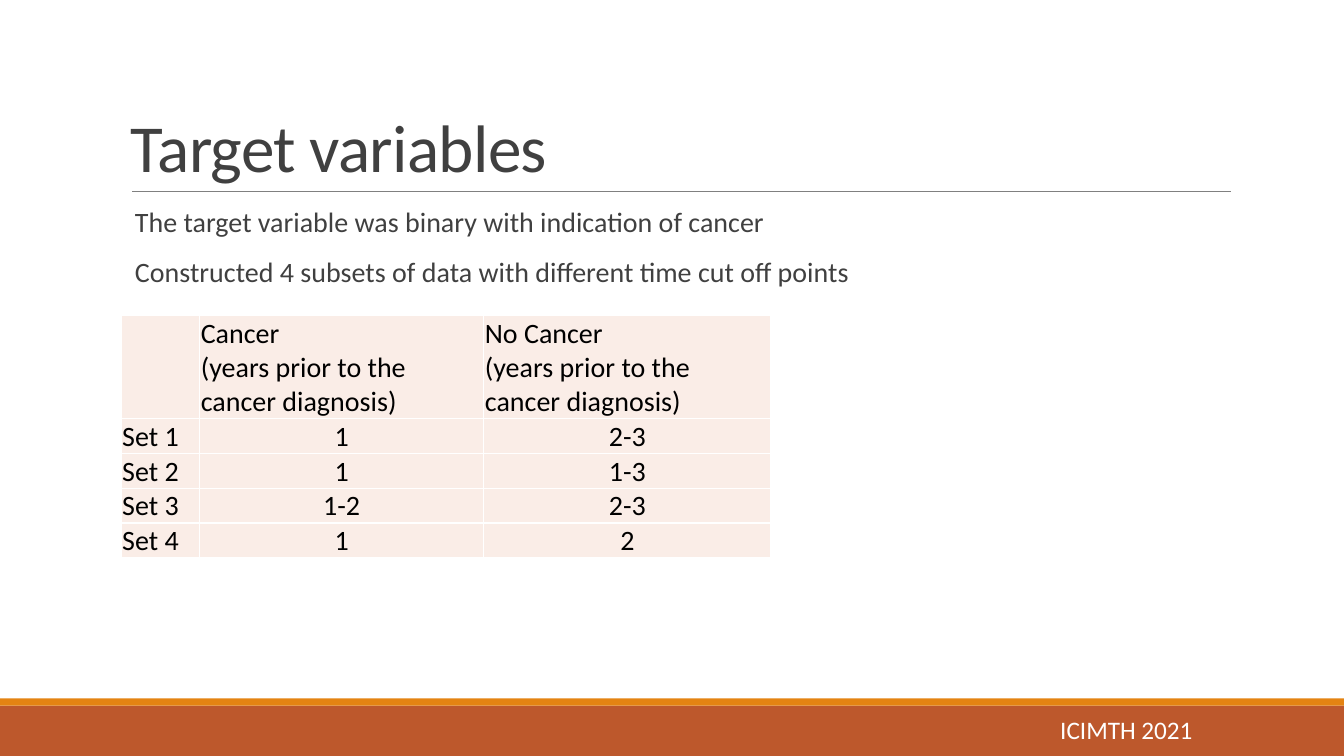
from dataclasses import dataclass, field

from lxml.etree import SubElement
from pptx import Presentation
from pptx.dml.color import RGBColor
from pptx.enum.shapes import MSO_CONNECTOR, MSO_SHAPE
from pptx.enum.text import MSO_ANCHOR as ANCHOR, PP_ALIGN as ALIGN
from pptx.oxml import parse_xml
from pptx.oxml.ns import qn
from pptx.util import Cm, Pt

FONT = "Calibri"
DRAWING_NS = "http://schemas.openxmlformats.org/drawingml/2006/main"
SLIDE_W, SLIDE_H = 33.87, 19.05
LEFT, CONTENT_W = 3.05, 27.94
RUST, ORANGE, GREY, DARK = "BD582C", "E48312", "808080", "404040"
WHITE, BLACK, CELL_FILL = "FFFFFF", "000000", "FAEDE7"


@dataclass
class Band:
    top: float
    height: float
    fill: str


@dataclass
class TextBlock:
    lines: list[str]
    box: tuple[float, float, float, float]
    size: float
    color: str
    frame: dict = field(default_factory=dict)
    para: dict = field(default_factory=dict)
    spacing: int = 0
    bullet: bool = False


BANDS = [Band(17.78, 1.27, RUST), Band(17.6, 0.18, ORANGE)]

TEXTS = [
    TextBlock(["Target variables"], (LEFT, 0.79, CONTENT_W, 4.04), 48, DARK,
              {"vertical_anchor": ANCHOR.BOTTOM}, {"line_spacing": 0.85},
              spacing=-50),
    TextBlock(["The target variable was binary with indication of cancer",
               "Constructed 4 subsets of data with different time cut off points"],
              (LEFT, 5.13, CONTENT_W, 11.18), 20, DARK,
              {"margin_left": 0, "margin_right": 0},
              {"line_spacing": 0.9, "space_before": Pt(12), "space_after": Pt(2)},
              bullet=True),
    TextBlock(["ICIMTH 2021"], (26.47, 17.88, 6.76, 1.02), 18, WHITE),
]

COL_WIDTHS = [1.98, 7.16, 7.24]
ROW_HEIGHTS = [2.59] + [0.88] * 4
SUBSETS = [
    ["", "Cancer\n(years prior to the cancer diagnosis)",
     "No Cancer\n(years prior to the cancer diagnosis)"],
    ["Set 1", "1", "2-3"],
    ["Set 2", "1", "1-3"],
    ["Set 3", "1-2", "2-3"],
    ["Set 4", "1", "2"],
]
CELL_FORMAT = {
    "margin_left": Cm(0.03), "margin_right": Cm(0.03),
    "margin_top": Cm(0.03), "margin_bottom": 0,
    "vertical_anchor": ANCHOR.BOTTOM,
}


def rgb(color: str) -> RGBColor:
    return RGBColor.from_string(color)


def apply(target, values: dict) -> None:
    for name, value in values.items():
        setattr(target, name, value)


def style_runs(p, size: float, color: str) -> None:
    for r in p.runs:
        apply(r.font, {"name": FONT, "size": Pt(size)})
        r.font.color.rgb = rgb(color)


def add_bullet(p) -> None:
    """Give the paragraph a blank bullet with a hanging indent."""
    p_pr = p._p.get_or_add_pPr()
    p_pr.set("marL", str(Cm(0.25)))
    p_pr.set("indent", str(-Cm(0.25)))
    SubElement(p_pr, qn("a:buChar")).set("char", " ")


def draw_band(slide, band: Band) -> None:
    sp = slide.shapes.add_shape(MSO_SHAPE.RECTANGLE, 0, Cm(band.top),
                                Cm(SLIDE_W), Cm(band.height))
    sp.shadow.inherit = False
    sp.fill.solid()
    sp.fill.fore_color.rgb = rgb(band.fill)
    sp.line.fill.background()


def draw_rule(slide, x1: float, x2: float, y: float) -> None:
    line = slide.shapes.add_connector(MSO_CONNECTOR.STRAIGHT,
                                      Cm(x1), Cm(y), Cm(x2), Cm(y))
    line.line.color.rgb = rgb(GREY)
    line.line.width = Pt(0.5)
    SubElement(line._element.spPr, qn("a:effectLst"))


def draw_text(slide, block: TextBlock) -> None:
    tf = slide.shapes.add_textbox(*map(Cm, block.box)).text_frame
    apply(tf, {"word_wrap": True, **block.frame})
    for i, line in enumerate(block.lines):
        p = tf.add_paragraph() if i else tf.paragraphs[0]
        p.text = line
        apply(p, block.para)
        style_runs(p, block.size, block.color)
        if block.bullet:
            add_bullet(p)
        if block.spacing:
            for r in p.runs:
                r.font._element.set("spc", str(block.spacing))


def add_borders(cell, color: str, width: float) -> None:
    tc_pr = cell._tc.get_or_add_tcPr()
    for i, side in enumerate(("lnL", "lnR", "lnT", "lnB")):
        tc_pr.insert(i, parse_xml(
            f'<a:{side} xmlns:a="{DRAWING_NS}" w="{Pt(width)}"><a:solidFill>'
            f'<a:srgbClr val="{color}"/></a:solidFill></a:{side}>'))


def draw_table(slide, x: float, y: float) -> None:
    table = slide.shapes.add_table(
        len(SUBSETS), len(COL_WIDTHS), Cm(x), Cm(y),
        Cm(sum(COL_WIDTHS)), Cm(sum(ROW_HEIGHTS))).table
    for col, width in zip(table.columns, COL_WIDTHS):
        col.width = Cm(width)
    for row, height in zip(table.rows, ROW_HEIGHTS):
        row.height = Cm(height)
    for i, values in enumerate(SUBSETS):
        for j, value in enumerate(values):
            cell = table.cell(i, j)
            apply(cell, CELL_FORMAT)
            cell.fill.solid()
            cell.fill.fore_color.rgb = rgb(CELL_FILL)
            add_borders(cell, WHITE, 1)
            p = cell.text_frame.paragraphs[0]
            p.text = value
            p.alignment = ALIGN.CENTER if i and j else ALIGN.LEFT
            p.font.bold = False
            style_runs(p, 20, BLACK)
            for r in p.runs:
                r.font.bold = False


def main() -> None:
    prs = Presentation()
    prs.slide_width, prs.slide_height = Cm(SLIDE_W), Cm(SLIDE_H)
    s = prs.slides.add_slide(prs.slide_layouts[6])

    # Footer bands and title rule
    for band in BANDS:
        draw_band(s, band)
    draw_rule(s, 3.33, 31.01, 4.83)

    # Title, body and footer text
    for block in TEXTS:
        draw_text(s, block)

    # Subset table
    draw_table(s, LEFT, 7.95)

    prs.save("out.pptx")


if __name__ == "__main__":
    main()
